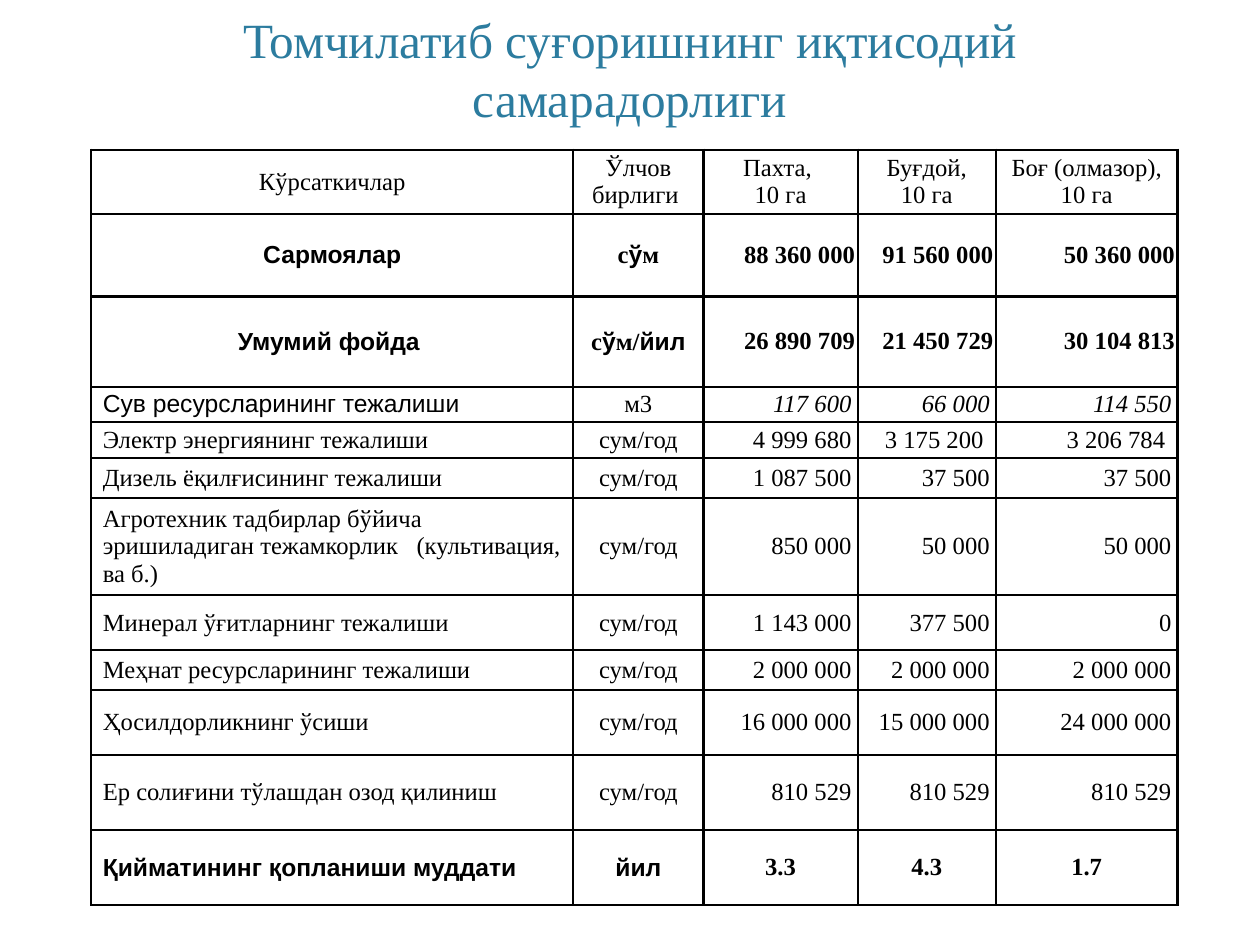
from dataclasses import dataclass

from lxml.etree import SubElement
from pptx import Presentation
from pptx.dml.color import RGBColor
from pptx.enum.text import MSO_ANCHOR, PP_ALIGN
from pptx.oxml.ns import qn
from pptx.slide import Slide
from pptx.table import _Cell
from pptx.text.text import _Paragraph, _Run
from pptx.util import Emu, Pt

PX = 9144
HUES = {"title": "2C7C9F", "ink": "000000", "paper": "FFFFFF"}
FONTS = ("Times New Roman", "Arial")
SIDES = {"l": PP_ALIGN.LEFT, "c": PP_ALIGN.CENTER, "r": PP_ALIGN.RIGHT}
MARK = "|"


@dataclass(frozen=True)
class Look:
    sides: str
    bold: bool = False
    slant: bool = False
    pad: tuple[int, int] = (3, 3)


@dataclass(frozen=True)
class Row:
    high: int
    look: Look
    texts: tuple[str, ...]


HEAD = Look("ccccc")
TOTAL = Look("ccrrr", bold=True)
SAVED = Look("lcrrr", slant=True, pad=(7, 0))
ITEM = Look("lcrrr", pad=(7, 0))
TERM = Look("lcccc", bold=True)
UNIT = "сум/год"

WIDTHS = (544, 147, 174, 156, 205)
ROWS = (
    Row(68, HEAD, ("Кўрсаткичлар", "Ўлчов бирлиги ", "Пахта, \n10 га",
                   "Буғдой,\n10 га", "Боғ (олмазор),\n10 га")),
    Row(93, TOTAL, ("|Сармоялар", "с|ў|м", "88 360 000", "91 560 000", "50 360 000")),
    Row(102, TOTAL, ("|Умумий фойда ", "с|ў|м/|йил", "26 890 709", "21 450 729", "30 104 813")),
    Row(37, SAVED, ("|Сув ресурсларининг тежалиши", "м3", "117 600", "66 000", "114 550")),
    Row(41, ITEM, ("Электр энергиянинг тежалиши", UNIT, "4 999 680", "3 175 200 ", "3 206 784 ")),
    Row(45, ITEM, ("Дизель ёқилғисининг тежалиши", UNIT, "1 087 500", "37 500", "37 500")),
    Row(110, ITEM, ("Агротехник тадбирлар бўйича эришиладиган тежамкорлик   (культивация, ва б.)",
                    UNIT, "850 000", "50 000", "50 000")),
    Row(62, ITEM, ("Минерал ўғитларнинг тежалиши", UNIT, "1 143 000", "377 500", "0")),
    Row(45, ITEM, ("Меҳнат ресурсларининг тежалиши", UNIT, "2 000 000", "2 000 000", "2 000 000")),
    Row(73, ITEM, ("Ҳосилдорликнинг ўсиши", UNIT, "16 000 000", "15 000 000", "24 000 000")),
    Row(85, ITEM, ("Ер солиғини тўлашдан озод қилиниш", UNIT, "810 529", "810 529", "810 529")),
    Row(85, TERM, ("|Қийматининг қопланиши муддати", "|йил", "3.3", "4.3", "1.7")),
)


def px(size: int) -> Emu:
    return Emu(size * PX)


def paint(run: _Run, size: int, hue: str, font: str) -> None:
    run.font.size = Pt(size)
    run.font.name = font
    run.font.color.rgb = RGBColor.from_string(HUES[hue])


def frame(cell: _Cell) -> None:
    props = cell._tc.get_or_add_tcPr()
    for spot, name in enumerate(("a:lnL", "a:lnR", "a:lnT", "a:lnB")):
        line = SubElement(props, qn(name), w=str(Pt(2)))
        fill = SubElement(line, qn("a:solidFill"))
        SubElement(fill, qn("a:srgbClr"), val=HUES["ink"])
        props.insert(spot, line)


def write(para: _Paragraph, look: Look, col: int) -> None:
    parts = para.text.split(MARK)
    para.text = ""
    para.alignment = SIDES[look.sides[col]]
    if look.sides[col] == "l":
        para._p.get_or_add_pPr().set("marL", str(px(10)))
    for spot, part in enumerate(parts):
        if part:
            run = para.add_run()
            run.text = part
            paint(run, 20, "ink", FONTS[spot % 2])
            run.font.bold = look.bold
            run.font.italic = look.slant and col > 1


def fill_cell(cell: _Cell, text: str, look: Look, col: int) -> None:
    side, top = look.pad if col > 1 else (3, 3)
    cell.margin_left = cell.margin_right = px(side)
    cell.margin_top = cell.margin_bottom = px(top)
    cell.vertical_anchor = MSO_ANCHOR.MIDDLE
    cell.fill.solid()
    cell.fill.fore_color.rgb = RGBColor.from_string(HUES["paper"])
    cell.text_frame.text = text
    for para in cell.text_frame.paragraphs:
        write(para, look, col)
    frame(cell)


def add_title(slide: Slide, text: str) -> None:
    box = slide.shapes.add_textbox(px(139), px(11), px(1144), px(140)).text_frame
    box.word_wrap = True
    box.vertical_anchor = MSO_ANCHOR.BOTTOM
    box.margin_left = box.margin_right = px(14)
    box.margin_top = box.margin_bottom = px(7)
    box.text = text
    para = box.paragraphs[0]
    para.alignment = PP_ALIGN.CENTER
    paint(para.runs[0], 40, "title", FONTS[0])


def add_grid(slide: Slide) -> None:
    high = sum(row.high for row in ROWS)
    grid = slide.shapes.add_table(len(ROWS), len(WIDTHS), px(103), px(169),
                                  px(sum(WIDTHS)), px(high)).table
    grid.first_row = grid.horz_banding = False
    for col, wide in enumerate(WIDTHS):
        grid.columns[col].width = px(wide)
    for line, row in enumerate(ROWS):
        grid.rows[line].height = px(row.high)
        for col, text in enumerate(row.texts):
            fill_cell(grid.cell(line, col), text, row.look, col)


def main() -> None:
    deck = Presentation()
    deck.slide_width, deck.slide_height = px(1422), px(1067)
    slide = deck.slides.add_slide(deck.slide_layouts[6])
    add_title(slide, "Томчилатиб суғоришнинг иқтисодий самарадорлиги")
    add_grid(slide)
    deck.save("out.pptx")


if __name__ == "__main__":
    main()
